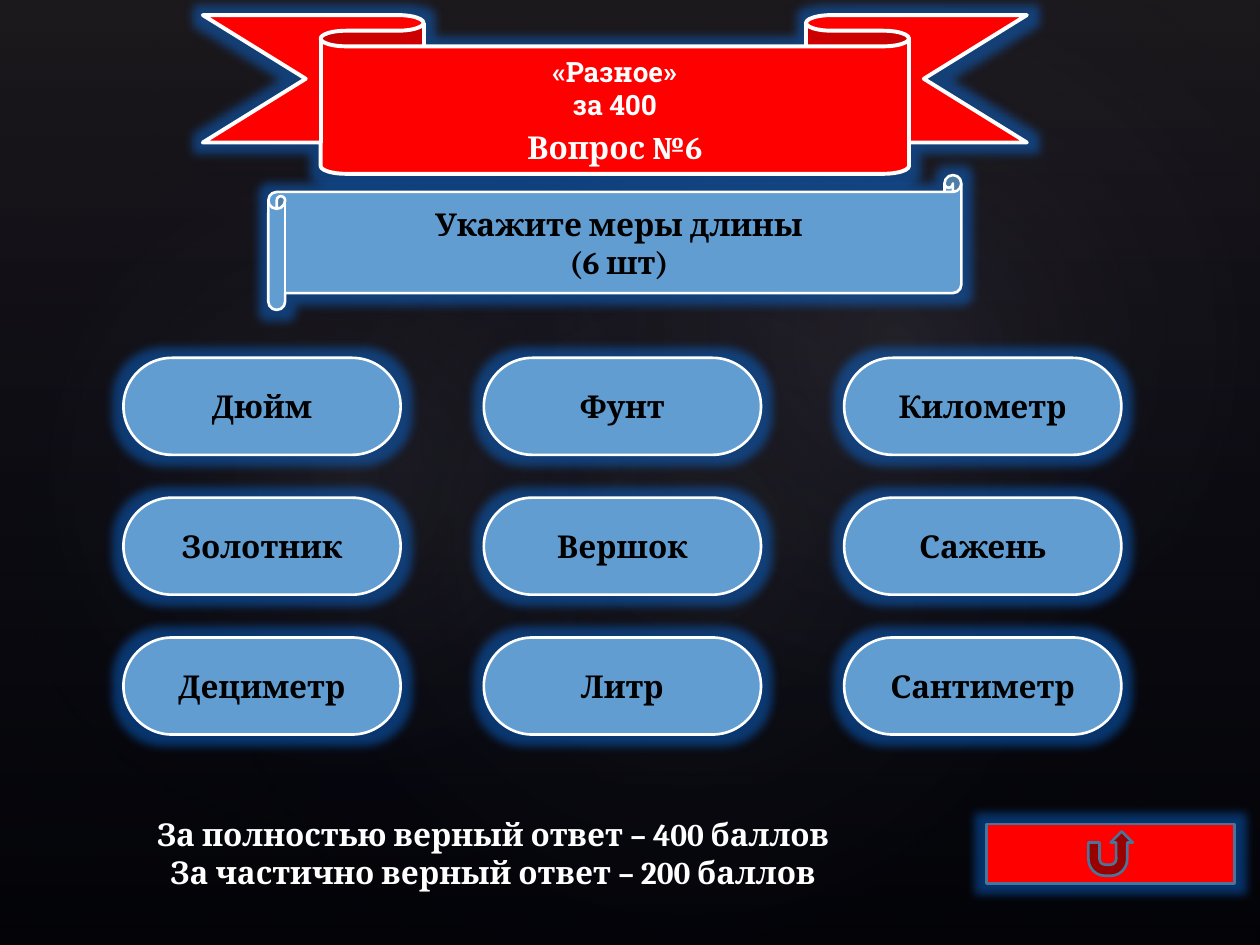
import pptx
import pptx.util
import pptx.dml.color
import pptx.enum.shapes
import pptx.enum.text
import pptx.oxml.ns
import lxml.etree

Inches = pptx.util.Inches
Pt = pptx.util.Pt
SHAPE = pptx.enum.shapes.MSO_SHAPE
HUES = {
    "black": "000000", "white": "FFFFFF", "red": "FF0000", "blue": "629DD1",
    "steel": "49749B", "glow": "0A7CFF", "plum": "504652", "navy": "242852",
    "mist": "C4BCC6",
}
BODY = "Cambria"
WORDS = [
    ["Дюйм", "Фунт", "Километр"],
    ["Золотник", "Вершок", "Сажень"],
    ["Дециметр", "Литр", "Сантиметр"],
]
SPOTS = [
    ((1.5, 1.14, 7.92, 6.24), 328.7, 7),
    ((-0.3, 1.28, 6.06, 4.9), 294.3, 8),
    ((3.58, 0.13, 7.09, 5.2), 328.7, 8),
]


def tone(name):
    """Return the named colour."""
    return pptx.dml.color.RGBColor.from_string(HUES[name])


def node(parent, tag, **attrs):
    """Add a DrawingML child element."""
    name = pptx.oxml.ns.qn("a:" + tag)
    return lxml.etree.SubElement(parent, name, attrs)


def place(slide, kind, box):
    """Add a shape without a shadow in a box given in inches."""
    shape = slide.shapes.add_shape(kind, *map(Inches, box))
    shape.shadow.inherit = False
    return shape


def haze(slide, kind, box, stops):
    """Add a translucent gradient shape from (position, colour, alpha) stops."""
    shape = place(slide, kind, box)
    shape.line.fill.background()
    shape.fill.gradient()
    shape.fill.gradient_angle = 270
    marks = shape._element.spPr.findall(".//" + pptx.oxml.ns.qn("a:gs"))
    for stop, mark, (pos, hue, alpha) in zip(shape.fill.gradient_stops, marks, stops):
        stop.position = pos
        stop.color.rgb = tone(hue)
        node(mark[0], "alpha", val=str(alpha * 1000))
    return shape


def backdrop(slide, box):
    """Paint the dark background and its soft spots of light."""
    fill = slide.background.fill
    fill.solid()
    fill.fore_color.rgb = tone("black")
    haze(slide, SHAPE.RECTANGLE, box, [(0, "plum", 36), (1, "navy", 10)])
    for (left, top, wide, high), turn, alpha in SPOTS:
        spot = haze(slide, SHAPE.OVAL, (box[0] + left, box[1] + top, wide, high),
                    [(0, "mist", alpha), (0.58, "navy", 0)])
        spot.rotation = turn
        line = spot._element.spPr.find(".//" + pptx.oxml.ns.qn("a:lin"))
        grad = line.getparent()
        grad.remove(line)
        focus = node(grad, "path", path="circle")
        node(focus, "fillToRect", l="50000", t="50000", r="50000", b="50000")


def glow(slide, kind, box, fill, line="white", width=1.5):
    """Add a filled, outlined shape with a blue glow."""
    shape = place(slide, kind, box)
    shape.fill.solid()
    shape.fill.fore_color.rgb = tone(fill)
    shape.line.color.rgb = tone(line)
    shape.line.width = Pt(width)
    effect = shape._element.spPr.find(pptx.oxml.ns.qn("a:effectLst"))
    halo = node(effect, "glow", rad=str(Pt(11)))
    hue = node(halo, "srgbClr", val=HUES["glow"])
    node(hue, "alpha", val="40000")
    return shape


def write(shape, lines, hue, size=18):
    """Write bold centred lines and return their paragraphs."""
    frame = shape.text_frame
    frame.word_wrap = True
    frame.text = "\n".join(lines)
    for para in frame.paragraphs:
        para.alignment = pptx.enum.text.PP_ALIGN.CENTER
        para.font.name = BODY
        para.font.size = Pt(size)
        para.font.bold = True
        para.font.color.rgb = tone(hue)
    return frame.paragraphs


def banner(slide, box):
    """Draw the ribbon with the topic and question number."""
    shape = glow(slide, SHAPE.DOWN_RIBBON, box, "red", width=2.25)
    shape.adjustments[0] = 0.197
    shape.adjustments[1] = 0.714
    paras = write(shape, ["«Разное»", "за 400", "Вопрос №6"], "white")
    for para in paras[:2]:
        para.font.name = "Roboto Slab"
        para.font.size = Pt(16)
    paras[2].space_before = Pt(4)


def scroll(slide, box):
    """Draw the scroll with the task."""
    shape = glow(slide, SHAPE.HORIZONTAL_SCROLL, box, "blue")
    write(shape, ["Укажите меры длины", "(6 шт)"], "black")


def grid(slide, box):
    """Spread the answer pills evenly over the box."""
    left, top, wide, high = box
    pill = (2.2, 0.77)
    step = ((wide - pill[0]) / 2, (high - pill[1]) / 2)
    for row, words in enumerate(WORDS):
        for col, word in enumerate(words):
            spot = (left + col * step[0], top + row * step[1], *pill)
            shape = glow(slide, SHAPE.ROUNDED_RECTANGLE, spot, "blue")
            shape.adjustments[0] = 0.5
            write(shape, [word], "black")


def footer(slide, box):
    """Place the scoring note and the return button."""
    left, top, wide, high = box
    note = slide.shapes.add_textbox(*map(Inches, (left, top, 5.77, high)))
    write(note, ["За полностью верный ответ – 400 баллов",
                 "За частично верный ответ – 200 баллов"], "white")
    size = (1.97, 0.47)
    spot = (left + wide - size[0], top + (high - size[1]) / 2, *size)
    glow(slide, SHAPE.ACTION_BUTTON_RETURN, spot, "red", "steel")


def main():
    """Build and save the slide."""
    deck = pptx.Presentation()
    deck.slide_width = Inches(10)
    deck.slide_height = Inches(7.5)
    slide = deck.slides.add_slide(deck.slide_layouts[6])
    backdrop(slide, (0, 0, 10, 7.5))
    banner(slide, (1.61, 0.12, 6.54, 1.26))
    scroll(slide, (2.13, 1.39, 5.5, 1.07))
    grid(slide, (0.98, 2.84, 7.92, 2.99))
    footer(slide, (1.03, 6.42, 8.77, 0.71))
    deck.save("out.pptx")


if __name__ == "__main__":
    main()
